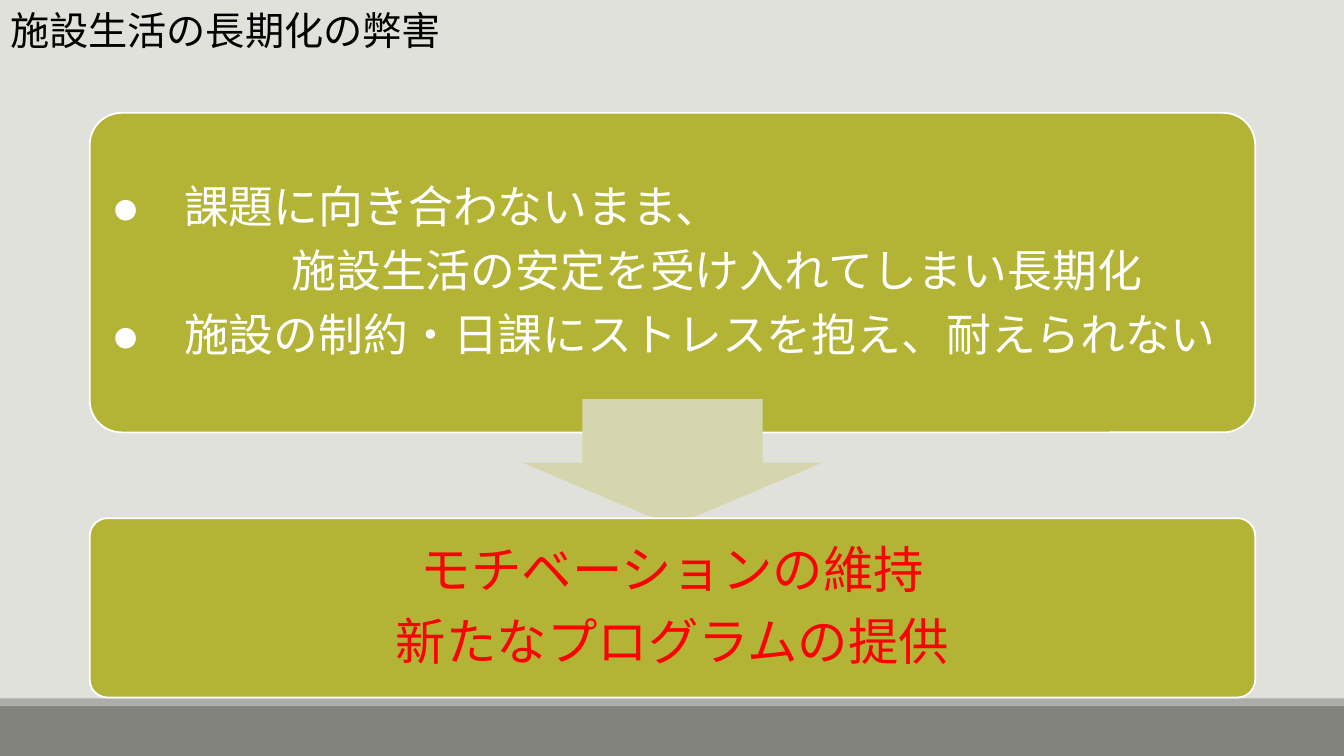
from lxml import etree
from pptx import Presentation
from pptx.dml.color import RGBColor
from pptx.enum.shapes import MSO_SHAPE
from pptx.enum.text import MSO_ANCHOR, MSO_AUTO_SIZE, PP_ALIGN
from pptx.oxml.ns import qn
from pptx.util import Inches, Pt

RECTANGLE, ROUNDED = MSO_SHAPE.RECTANGLE, MSO_SHAPE.ROUNDED_RECTANGLE
DOWN_ARROW = MSO_SHAPE.DOWN_ARROW
TOP, MIDDLE = MSO_ANCHOR.TOP, MSO_ANCHOR.MIDDLE
LEFT, CENTER = PP_ALIGN.LEFT, PP_ALIGN.CENTER
GROW = MSO_AUTO_SIZE.SHAPE_TO_FIT_TEXT

COLORS = {
    "background": "E1E1DB", "footer": "82847C", "stripe": "ACADA8",
    "panel": "B3B435", "arrow": "D6D6AE",
    "white": "FFFFFF", "black": "000000", "red": "FF0000",
}
PAGE_WIDTH, PAGE_HEIGHT = 13.33, 7.5
PANEL_LEFT, PANEL_WIDTH = 0.89, 11.56


def color(name):
    return RGBColor.from_string(COLORS[name])


class SlideBuilder:
    title_font, body_font = "Arial", "Calibri"

    def __init__(self, deck):
        self.page = deck.slides.add_slide(deck.slide_layouts[5])
        background = self.page.background.fill
        background.solid()
        background.fore_color.rgb = color("background")

    def format_runs(self, para, font, size, color_name):
        for span in para.runs:
            span.font.name = font
            span.font.size = Pt(size)
            span.font.color.rgb = color(color_name)

    def title(self, text, left, top, width, height):
        box = self.page.shapes.title
        box.left, box.top = Inches(left), Inches(top)
        box.width, box.height = Inches(width), Inches(height)
        frame = box.text_frame
        frame.text = text
        frame.word_wrap = True
        frame.auto_size = GROW
        frame.vertical_anchor = TOP
        para = frame.paragraphs[0]
        para.alignment = LEFT
        self.format_runs(para, self.title_font, 28, "black")

    def shape(self, kind, left, top, width, height, fill, adjustments=()):
        shape = self.page.shapes.add_shape(
            kind, Inches(left), Inches(top), Inches(width), Inches(height))
        shape.shadow.inherit = False
        shape.fill.solid()
        shape.fill.fore_color.rgb = color(fill)
        shape.line.fill.background()
        for index, value in enumerate(adjustments):
            shape.adjustments[index] = value
        return shape

    def panel(self, lines, top, height, inset, size, color_name, alignment):
        """Add a rounded panel and return its text frame."""
        panel = self.shape(ROUNDED, PANEL_LEFT, top, PANEL_WIDTH, height, "panel", [0.1])
        panel.line.color.rgb = color("white")
        panel.line.width = Pt(1.25)
        frame = panel.text_frame
        frame.word_wrap = True
        frame.vertical_anchor = MIDDLE
        frame.margin_left = frame.margin_right = Inches(inset)
        frame.margin_top = frame.margin_bottom = Inches(inset)
        frame.text = "\n".join(lines)
        for para in frame.paragraphs:
            para.alignment = alignment
            para.line_spacing = 0.9
            para.space_after = Pt(0.35 * size)
            self.format_runs(para, self.body_font, size, color_name)
            for span in para.runs:
                latin = span.font._element.find(qn("a:latin"))
                east_asian = etree.Element(qn("a:ea"), typeface=self.body_font)
                latin.addnext(east_asian)
        return frame


def main():
    deck = Presentation()
    deck.slide_width, deck.slide_height = Inches(PAGE_WIDTH), Inches(PAGE_HEIGHT)
    slide = SlideBuilder(deck)

    slide.shape(RECTANGLE, 0, 7, PAGE_WIDTH, 0.5, "footer")
    slide.shape(RECTANGLE, 0, 6.93, PAGE_WIDTH, 0.07, "stripe")
    slide.title("施設生活の長期化の弊害", 0, 0.01, 9.09, 0.57)

    problems = slide.panel(
        ["●　課題に向き合わないまま、",
         "施設生活の安定を受け入れてしまい長期化",
         "●　施設の制約・日課にストレスを抱え、耐えられない"],
        1.12, 3.17, 0.13, 32, "white", LEFT)
    problems.margin_right = Inches(0.05)
    # The continuation line is indented by four characters of 32 points.
    properties = problems.paragraphs[1]._p.get_or_add_pPr()
    properties.set("marL", str(Pt(4 * 32)))
    properties.set("indent", "0")

    arrow_width = 2.98
    slide.shape(DOWN_ARROW, PANEL_LEFT + (PANEL_WIDTH - arrow_width) / 2, 3.96,
                arrow_width, 1.26, "arrow", [0.6, 0.5])
    slide.panel(["モチベーションの維持", "新たなプログラムの提供"],
                5.14, 1.78, 0.15, 36, "red", CENTER)

    deck.save("out.pptx")


if __name__ == "__main__":
    main()
